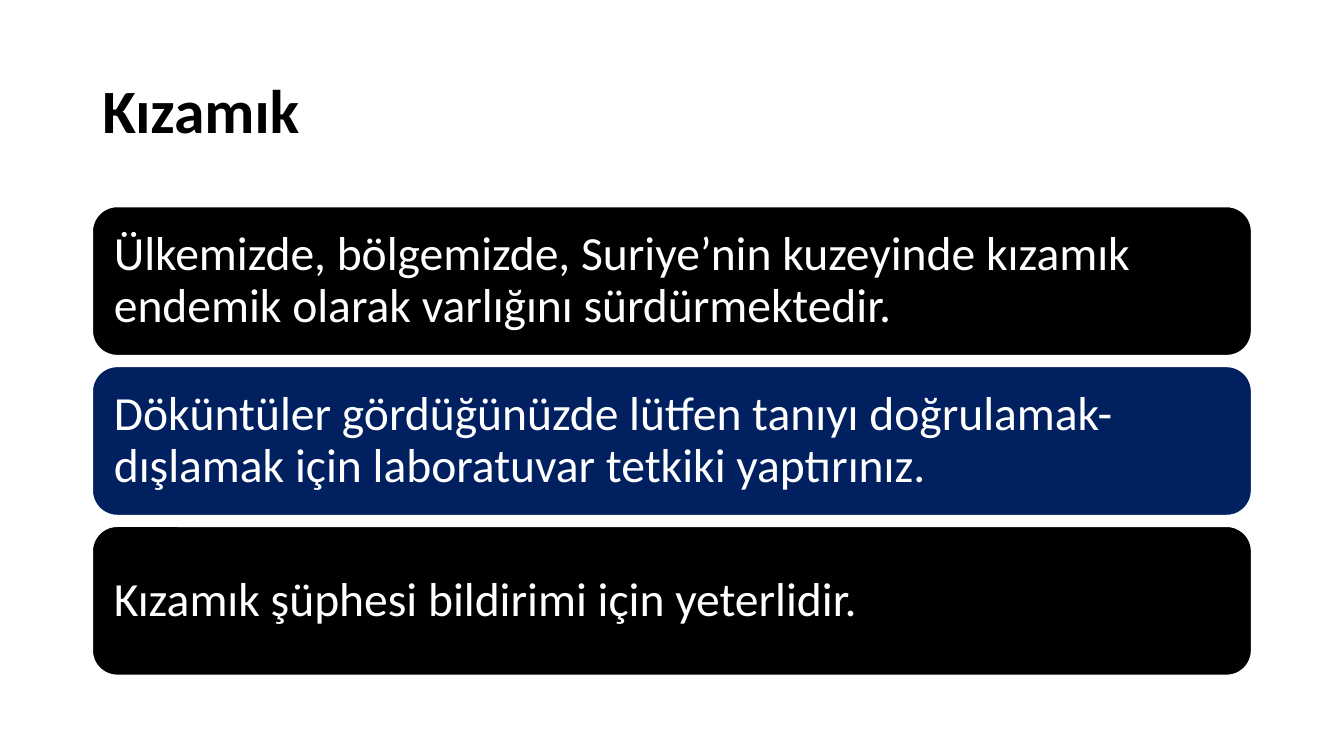
import pptx
import pptx.util
import pptx.dml.color
import pptx.enum.shapes
import pptx.enum.text

Pt = pptx.util.Pt
BLACK = pptx.dml.color.RGBColor(0x00, 0x00, 0x00)
NAVY = pptx.dml.color.RGBColor(0x00, 0x20, 0x60)
WHITE = pptx.dml.color.RGBColor(0xFF, 0xFF, 0xFF)


def write(holder, text, size, color, bold=False, inset_x=7.2, inset_y=3.6):
    frame = holder.text_frame
    frame.word_wrap = True
    frame.vertical_anchor = pptx.enum.text.MSO_ANCHOR.MIDDLE
    frame.margin_left = frame.margin_right = Pt(inset_x)
    frame.margin_top = frame.margin_bottom = Pt(inset_y)
    paragraph = frame.paragraphs[0]
    paragraph.alignment = pptx.enum.text.PP_ALIGN.LEFT
    paragraph.line_spacing = 0.9
    run = paragraph.add_run()
    run.text = text
    run.font.name = "Calibri"
    run.font.size = Pt(size)
    run.font.bold = bold
    run.font.color.rgb = color


deck = pptx.Presentation()
deck.slide_width = Pt(960)
deck.slide_height = Pt(540)
slide = deck.slides.add_slide(deck.slide_layouts[6])

LEFT, WIDTH = 66, 828
FIRST_TOP, BAR_HEIGHT, BAR_STEP = 147.6, 106.4, 114.2

heading = slide.shapes.add_textbox(Pt(LEFT), Pt(28.8), Pt(WIDTH), Pt(104.4))
write(heading, "Kızamık", size=44, color=BLACK, bold=True)

messages = [
    ("Ülkemizde, bölgemizde, Suriye’nin kuzeyinde kızamık endemik olarak varlığını sürdürmektedir.", BLACK),
    ("Döküntüler gördüğünüzde lütfen tanıyı doğrulamak- dışlamak için laboratuvar tetkiki yaptırınız.", NAVY),
    ("Kızamık şüphesi bildirimi için yeterlidir.", BLACK),
]
for index, (message, fill) in enumerate(messages):
    bar = slide.shapes.add_shape(
        pptx.enum.shapes.MSO_SHAPE.ROUNDED_RECTANGLE,
        Pt(LEFT), Pt(FIRST_TOP + index * BAR_STEP), Pt(WIDTH), Pt(BAR_HEIGHT))
    bar.shadow.inherit = False
    bar.fill.solid()
    bar.fill.fore_color.rgb = fill
    bar.line.color.rgb = WHITE
    bar.line.width = Pt(1)
    write(bar, message, size=34, color=WHITE, inset_x=10.2, inset_y=10.2)

deck.save("out.pptx")
